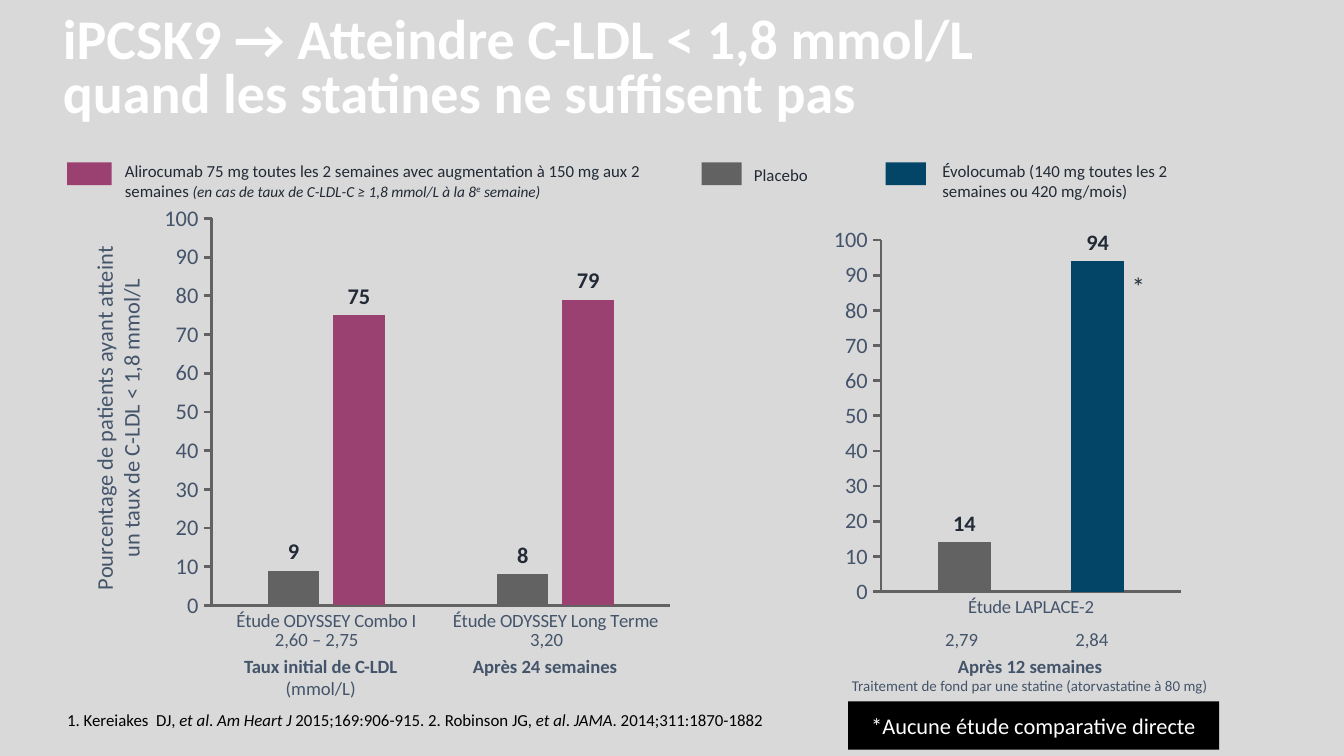
from copy import deepcopy

from lxml import etree
from pptx import Presentation
from pptx.chart.data import CategoryChartData
from pptx.dml.color import RGBColor
from pptx.enum.chart import XL_CHART_TYPE, XL_LABEL_POSITION, XL_TICK_MARK
from pptx.enum.shapes import MSO_SHAPE
from pptx.enum.text import MSO_ANCHOR, MSO_AUTO_SIZE, PP_ALIGN
from pptx.oxml import parse_xml
from pptx.oxml.ns import nsdecls, qn
from pptx.util import Cm, Pt

COLUMNS = XL_CHART_TYPE.COLUMN_CLUSTERED
OUTSIDE_END = XL_LABEL_POSITION.OUTSIDE_END
TICK_NONE, TICK_OUT = XL_TICK_MARK.NONE, XL_TICK_MARK.OUTSIDE
RECTANGLE = MSO_SHAPE.RECTANGLE
TOP, MIDDLE, BOTTOM = MSO_ANCHOR.TOP, MSO_ANCHOR.MIDDLE, MSO_ANCHOR.BOTTOM
LEFT, CENTER = PP_ALIGN.LEFT, PP_ALIGN.CENTER

FONT = "Calibri"
COLORS = {
    "background": "D9D9D9", "white": "FFFFFF", "black": "000000",
    "ink": "222A35", "slate": "44546A", "placebo": "626262",
    "alirocumab": "9A4171", "evolocumab": "034566",
}
ITALIC, ROMAN = {"italic": True}, {}


def color(name):
    return RGBColor.from_string(COLORS[name])


def assign(target, values):
    for attribute, value in values.items():
        setattr(target, attribute, value)


def style_font(font, size, tint, **extra):
    assign(font, {"name": FONT, "size": Pt(size), "bold": False, **extra})
    font.color.rgb = color(tint)


def place(holder, box):
    assign(holder, dict(zip(("left", "top", "width", "height"), map(Cm, box))))


def write(frame, paragraphs, size, tint, align=LEFT, anchor=TOP, pad=0.0, spacing=1.0):
    assign(frame, {
        "word_wrap": True, "auto_size": MSO_AUTO_SIZE.NONE, "vertical_anchor": anchor,
        "margin_left": 0, "margin_right": 0, "margin_top": Cm(pad), "margin_bottom": Cm(pad),
    })
    for index, pieces in enumerate(paragraphs):
        paragraph = frame.add_paragraph() if index else frame.paragraphs[0]
        assign(paragraph, {"alignment": align, "line_spacing": spacing,
                           "space_before": Pt(0), "space_after": Pt(0)})
        for text, changes in pieces:
            if text == "\n":
                paragraph.add_line_break()
                paragraph._p[-1].append(deepcopy(paragraph.runs[-1]._r.rPr))
                continue
            run = paragraph.add_run()
            run.text = text
            style_font(run.font, **{"size": size, "tint": tint, **changes})


def add_label(slide, box, paragraphs, size, tint, **layout):
    label = slide.shapes.add_textbox(*map(Cm, box))
    write(label.text_frame, paragraphs, size, tint, **layout)
    return label


def add_block(slide, box, tint):
    block = slide.shapes.add_shape(RECTANGLE, *map(Cm, box))
    block.shadow.inherit = False
    block.fill.solid()
    block.fill.fore_color.rgb = color(tint)
    block.line.fill.background()
    return block


def build_title(slide, box):
    heading = slide.shapes.title
    place(heading, box)
    write(heading.text_frame, [[
        ("iPCSK9 → Atteindre C-LDL < 1,8 mmol/L ", {}), ("\n", {}),
        ("quand les statines ne suffisent pas", {}),
    ]], 30, "white", anchor=MIDDLE, pad=0.13, spacing=0.8)
    for run in heading.text_frame.paragraphs[0].runs:
        run.font.bold = True
        run._r.rPr.find(qn("a:solidFill")).addnext(parse_xml(
            f'<a:effectLst {nsdecls("a")}><a:outerShdw blurRad="50800" dist="38100" '
            'dir="2700000" algn="tl"><a:srgbClr val="000000"><a:alpha val="60000"/>'
            '</a:srgbClr></a:outerShdw></a:effectLst>'))


def build_references(slide, box):
    references = slide.placeholders[1]
    place(references, box)
    properties = references.text_frame.paragraphs[0]._p.get_or_add_pPr()
    assign_indent = {"marL": "0", "indent": "0"}
    for attribute, value in assign_indent.items():
        properties.set(attribute, value)
    etree.SubElement(properties, qn("a:buFont"), typeface="+mj-lt")
    etree.SubElement(properties, qn("a:buAutoNum"), type="arabicPeriod")
    write(references.text_frame, [[
        (" Kereiakes  DJ, ", ROMAN), ("et al", ITALIC), (". ", ROMAN),
        ("Am Heart J ", ITALIC), ("2015;169:906-915. 2. Robinson JG, ", ROMAN),
        ("et al", ITALIC), (". ", ROMAN), ("JAMA", ITALIC),
        (". 2014;311:1870-1882", ROMAN),
    ]], 9, "black", anchor=BOTTOM, pad=0.13, spacing=0.9)


def build_chart(slide, box, studies, series, plot_area, axis_title=None):
    data = CategoryChartData()
    data.categories = studies
    for name, values, _ in series:
        data.add_series(name, values)
    chart = slide.shapes.add_chart(COLUMNS, *map(Cm, box), data).chart
    assign(chart, {"has_title": False, "has_legend": False})
    style_font(chart.font, 10, "ink")
    plot = chart.plots[0]
    assign(plot, {"gap_width": 219, "overlap": -27, "vary_by_categories": False})
    for bars, (_, _, tint) in zip(plot.series, series):
        bars.format.fill.solid()
        bars.format.fill.fore_color.rgb = color(tint)
        assign(bars.data_labels, {"show_value": True, "position": OUTSIDE_END})
        style_font(bars.data_labels.font, 12, "ink", bold=True)
    for axis, size, tick in ((chart.category_axis, 10, TICK_NONE),
                             (chart.value_axis, 12, TICK_OUT)):
        assign(axis, {"has_major_gridlines": False, "major_tick_mark": tick,
                      "minor_tick_mark": TICK_NONE})
        style_font(axis.tick_labels.font, size, "slate")
        axis.format.line.color.rgb = color("placebo")
        axis.format.line.width = Pt(1.5)
    assign(chart.value_axis, {"minimum_scale": 0, "maximum_scale": 100, "major_unit": 10})
    if axis_title:
        frame = chart.value_axis.axis_title.text_frame
        frame.text = axis_title
        frame._txBody.bodyPr.set("rot", "-5400000")
        style_font(frame.paragraphs[0].runs[0].font, 12, "slate")
    area = chart._chartSpace.chart.plotArea
    for layout in area.findall(qn("c:layout")):
        area.remove(layout)
    edges = "".join(f'<c:{key} val="{value}"/>' for key, value in zip("xywh", plot_area))
    area.insert(0, parse_xml(
        f'<c:layout {nsdecls("c")}><c:manualLayout><c:layoutTarget val="inner"/>'
        f'<c:xMode val="edge"/><c:yMode val="edge"/>{edges}</c:manualLayout></c:layout>'))


def build_legend(slide, box):
    left, top, _, height = box
    alirocumab = [
        ("Alirocumab 75 mg toutes les 2 semaines avec augmentation à 150 mg aux 2 semaines ", {}),
        ("(en cas de taux de C-LDL-C ≥ 1,8 mmol/L à la 8", {"size": 8.2, **ITALIC}),
        ("e", {"size": 8.2, **ITALIC}), (" semaine)", {"size": 8.2, **ITALIC}),
    ]
    evolocumab = [("Évolocumab (140 mg toutes les 2 semaines ou 420 mg/mois)", {})]
    entries = (
        ("alirocumab", 0, 0.84, 1.09, 9.78, 0, alirocumab),
        ("placebo", 11.99, 0.76, 12.98, 1.75, 0.08, [("Placebo", {})]),
        ("evolocumab", 15.47, 0.76, 16.54, 5.05, 0, evolocumab),
    )
    for tint, key_x, key_width, text_x, text_width, drop, pieces in entries:
        add_block(slide, (left + key_x, top + 0.17, key_width, 0.43), tint)
        label = add_label(slide, (left + text_x, top + drop, text_width, height),
                          [pieces], 9, "ink", pad=0.13)
        for run in label.text_frame.paragraphs[0].runs:
            if run.text == "e":
                run._r.rPr.set("baseline", "30000")


def build_captions(slide, box, baselines, notes):
    left, top, _, height = box
    for x, width, text in baselines:
        add_label(slide, (left + x, top, width, 0.56), [[(text, {})]], 10, "slate", align=CENTER)
    for x, width, paragraphs in notes:
        add_label(slide, (left + x, top + 0.51, width, height - 0.51), paragraphs,
                  10, "slate", align=CENTER)


def build_odyssey(slide, box):
    left, top, _, _ = box
    build_chart(slide, box, ["Étude ODYSSEY Combo I", "Étude ODYSSEY Long Terme"],
                [("Series 1", (9, 8), "placebo"), ("Series 2", (75, 79), "alirocumab")],
                (0.24, 0.05, 0.74, 0.87),
                "Pourcentage de patients ayant atteint un taux de C-LDL < 1,8 mmol/L")
    build_captions(slide, (left + 2.8, top + 8.15, 8.38, 1.37),
                   [(0.79, 2.41, "2,60 – 2,75"), (5.26, 2.16, "3,20")],
                   [(0, 4.14, [[("Taux initial de C-LDL", {"bold": True}), ("\n", {}),
                                ("(mmol/L)", {})]]),
                    (4.24, 4.14, [[("Après 24 semaines", {"bold": True})]])])


def build_laplace(slide, box):
    left, top, _, _ = box
    build_chart(slide, box, ["Étude LAPLACE-2"],
                [("Series 1", (14,), "placebo"), ("Series 2", (None,), "placebo"),
                 ("Series 3", (94,), "evolocumab")], (0.27, 0.02, 0.73, 0.88))
    add_label(slide, (left + 6.84, top + 0.74, 0.53, 0.74), [[("*", {})]],
              14, "ink", anchor=MIDDLE)
    build_captions(slide, (left + 1.22, top + 7.57, 7.39, 1.27),
                   [(1.81, 1.19, "2,79"), (4.27, 1.19, "2,84")],
                   [(0, 7.39, [[("Après 12 semaines", {"bold": True})],
                               [("Traitement de fond par une statine (atorvastatine à 80 mg)",
                                 {"size": 8})]])])


def build_caveat(slide, box):
    caveat = add_block(slide, box, "black")
    write(caveat.text_frame, [[("*Aucune étude comparative directe", {})]],
          12, "white", align=CENTER, anchor=MIDDLE, pad=0.13)


def main():
    deck = Presentation()
    assign(deck, {"slide_width": Cm(25.4), "slide_height": Cm(14.29)})
    slide = deck.slides.add_slide(deck.slide_layouts[1])
    slide.background.fill.solid()
    slide.background.fill.fore_color.rgb = color("background")
    build_title(slide, (1.19, 0.28, 23.34, 2.11))
    build_references(slide, (1.27, 13.36, 24.13, 0.58))
    build_laplace(slide, (14.55, 4.29, 7.8, 7.65))
    build_odyssey(slide, (1.19, 3.71, 11.71, 8.41))
    build_legend(slide, (1.27, 2.9, 21.59, 1.02))
    build_caveat(slide, (16.03, 13.26, 7.01, 0.91))
    deck.save("out.pptx")


if __name__ == "__main__":
    main()
